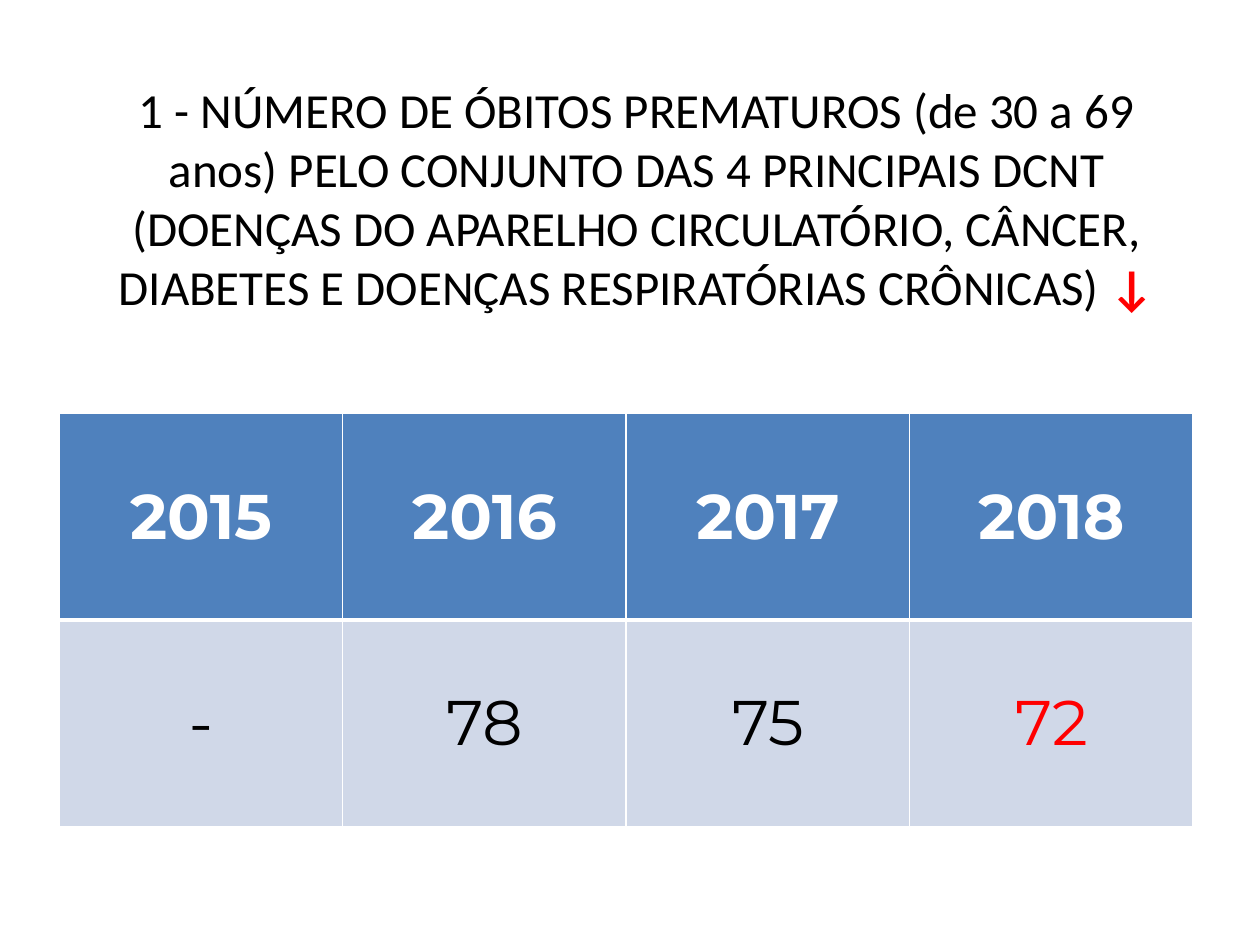
from dataclasses import dataclass

from lxml import etree
from pptx import Presentation, util as u
from pptx.dml.color import RGBColor
from pptx.enum import text as t
from pptx.oxml import ns


@dataclass(frozen=True)
class Theme:
    """Hold the colours, fonts and type sizes of the slide."""
    ink: str = "000000"
    white: str = "FFFFFF"
    red: str = "FF0000"
    head: str = "4F81BD"
    body: str = "D0D8E8"
    sans: str = "Calibri"
    geo: str = "Montserrat"
    title: int = 28
    cell: int = 36


LOOK = Theme()
TITLE = ("1 - NÚMERO DE ÓBITOS PREMATUROS (de 30 a 69 anos) PELO CONJUNTO "
         "DAS 4 PRINCIPAIS DCNT (DOENÇAS DO APARELHO CIRCULATÓRIO, CÂNCER, "
         "DIABETES E DOENÇAS RESPIRATÓRIAS CRÔNICAS)")
YEARS = ["2015", "2016", "2017", "2018"]
DEATHS = ["-", "78", "75", "72"]


def write(para, words, font=LOOK.sans, size=LOOK.title, color=LOOK.ink, bold=False):
    """Add a formatted run to a centred paragraph."""
    para.alignment = t.PP_ALIGN.CENTER
    run = para.add_run()
    run.text = words
    run.font.name = font
    run.font.size = u.Pt(size)
    run.font.bold = bold
    run.font.color.rgb = RGBColor.from_string(color)


def edge(cell, **widths):
    """Draw white cell borders, given as side=points."""
    props = cell._tc.get_or_add_tcPr()
    for spot, (side, width) in enumerate(widths.items()):
        line = etree.Element(ns.qn(f"a:ln{side}"), w=str(u.Pt(width)))
        fill = etree.SubElement(line, ns.qn("a:solidFill"))
        etree.SubElement(fill, ns.qn("a:srgbClr"), val=LOOK.white)
        props.insert(spot, line)


def add_title(slide):
    """Add the heading with its red arrow."""
    box = slide.shapes.add_textbox(
        u.Inches(0.55), u.Inches(0.16), u.Inches(9), u.Inches(2.81))
    frame = box.text_frame
    frame.word_wrap = True
    frame.vertical_anchor = t.MSO_ANCHOR.MIDDLE
    para = frame.paragraphs[0]
    write(para, TITLE)
    write(para, " ↓", color=LOOK.red, bold=True)


def add_grid(slide):
    """Add the table of deaths by year."""
    rows = [YEARS, DEATHS]
    grid = slide.shapes.add_table(
        len(rows), len(YEARS), u.Inches(0.47), u.Inches(3.28),
        u.Inches(9), u.Inches(3.28)).table
    for r, row in enumerate(rows):
        top = r == 0
        for c, words in enumerate(row):
            cell = grid.cell(r, c)
            cell.vertical_anchor = t.MSO_ANCHOR.MIDDLE
            cell.fill.solid()
            cell.fill.fore_color.rgb = RGBColor.from_string(
                LOOK.head if top else LOOK.body)
            edge(cell, L=1, R=1, T=1 if top else 3, B=3 if top else 1)
            last = c == len(row) - 1
            color = LOOK.white if top else LOOK.red if last else LOOK.ink
            write(cell.text_frame.paragraphs[0], words, font=LOOK.geo,
                  size=LOOK.cell, color=color, bold=top)


def main():
    """Build and save the slide."""
    deck = Presentation()
    deck.slide_width, deck.slide_height = u.Inches(10), u.Inches(7.5)
    slide = deck.slides.add_slide(deck.slide_layouts[6])
    add_title(slide)
    add_grid(slide)
    deck.save("out.pptx")


if __name__ == "__main__":
    main()
